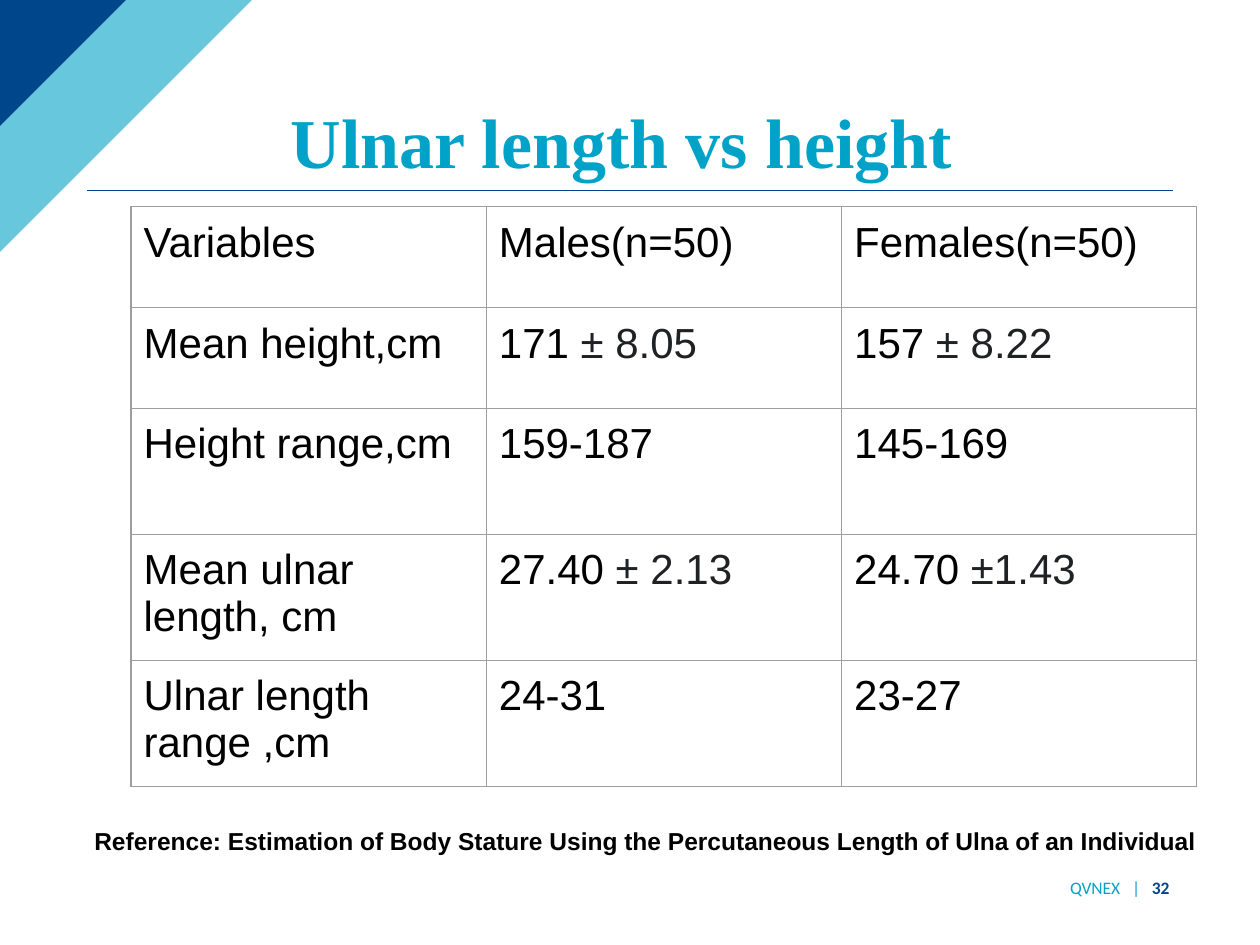
from dataclasses import dataclass

from lxml import etree
from pptx import Presentation
from pptx import util as u
from pptx.dml.color import RGBColor
from pptx.enum import shapes, text
from pptx.oxml import ns

COLORS = {
    "navy": "00468B",
    "teal": "00A2C7",
    "black": "000000",
    "charcoal": "202124",
    "grid": "9E9E9E",
}
WIDTH, HEIGHT = 10, 7.5
MARGIN = 0.069 * WIDTH
TITLE_BASE = 1.51


@dataclass
class Span:
    words: str
    color: str
    bold: bool = False
    tracking: float = 0  # extra points after each character


@dataclass
class Corner:
    width: float
    height: float
    color: str
    opacity: int = 100


CORNERS = [Corner(1.63, 1.64, "teal", 60), Corner(1.38, 1.39, "navy")]

# Each cell holds its value and, where there is one, the deviation
ROWS = [
    [("Variables",), ("Males(n=50)",), ("Females(n=50)",)],
    [("Mean height,cm",), ("171", " ± 8.05"), ("157", " ± 8.22")],
    [("Height range,cm",), ("159-187",), ("145-169",)],
    [("Mean ulnar length, cm",), ("27.40", " ± 2.13"), ("24.70", " ±1.43")],
    [("Ulnar length range ,cm",), ("24-31",), ("23-27",)],
]
ROW_HEIGHTS = [0.8, 0.8, 1, 1, 1]
COLUMN_WIDTH = 2.82

FOOTER = [
    Span("QVNEX", "teal"),
    Span(" ", "teal", tracking=4.5),
    Span("|", "teal"),
    Span(" ", "teal", tracking=4.5),
    Span("32", "navy", bold=True),
]


def rgb(name: str) -> RGBColor:
    return RGBColor.from_string(COLORS[name])


def write(para, spans: list[Span], font: str, size: float) -> None:
    para.font.name, para.font.size = font, u.Pt(size)
    for item in spans:
        span = para.add_run()
        span.text = item.words
        span.font.color.rgb = rgb(item.color)
        span.font.bold = item.bold
        if item.tracking:
            span.font._element.set("spc", str(round(item.tracking * 100)))


def draw_corner(page, corner: Corner) -> None:
    outline = page.shapes.build_freeform(0, 0, scale=u.Inches(1))
    outline.add_line_segments([(corner.width, 0), (0, corner.height)], close=True)
    triangle = outline.convert_to_shape()
    triangle.shadow.inherit = False
    triangle.line.fill.background()
    triangle.fill.solid()
    triangle.fill.fore_color.rgb = rgb(corner.color)
    if corner.opacity < 100:
        color = triangle._element.spPr.find(".//" + ns.qn("a:srgbClr"))
        etree.SubElement(color, ns.qn("a:alpha"), val=str(corner.opacity * 1000))


def draw_rule(page) -> None:
    y = u.Inches(TITLE_BASE)
    rule = page.shapes.add_connector(
        shapes.MSO_CONNECTOR.STRAIGHT,
        u.Inches(MARGIN), y, u.Inches(WIDTH - MARGIN), y)
    rule.line.color.rgb = rgb("navy")
    rule.line.width = u.Pt(0.75)
    etree.SubElement(rule._element.spPr, ns.qn("a:effectLst"))


def format_title(page) -> None:
    title = page.shapes.title
    title.left, title.top = u.Inches(MARGIN), u.Inches(0.4)
    title.width = u.Inches(WIDTH - 2 * MARGIN)
    title.height = u.Inches(TITLE_BASE - 0.4)
    frame = title.text_frame
    frame.auto_size = text.MSO_AUTO_SIZE.NONE
    frame.vertical_anchor = text.MSO_ANCHOR.BOTTOM
    para = frame.paragraphs[0]
    para.alignment = text.PP_ALIGN.CENTER
    para.line_spacing = 0.9
    write(para, [Span("Ulnar length vs height ", "teal", True)],
          "Times New Roman", 40)


def draw_borders(cell) -> None:
    properties = cell._tc.get_or_add_tcPr()
    for place, side in enumerate(("lnL", "lnR", "lnT", "lnB")):
        line = etree.Element(ns.qn("a:" + side), w=str(u.Pt(0.75)))
        fill = etree.SubElement(line, ns.qn("a:solidFill"))
        etree.SubElement(fill, ns.qn("a:srgbClr"), val=COLORS["grid"])
        properties.insert(place, line)


def draw_table(page) -> None:
    columns = len(ROWS[0])
    table = page.shapes.add_table(
        len(ROWS), columns, u.Inches(1.04), u.Inches(1.64),
        u.Inches(columns * COLUMN_WIDTH), u.Inches(sum(ROW_HEIGHTS))).table
    table.first_row = table.horz_banding = False
    for row, height in zip(table.rows, ROW_HEIGHTS):
        row.height = u.Inches(height)
    for r, row in enumerate(ROWS):
        for c, parts in enumerate(row):
            cell = table.cell(r, c)
            cell.fill.background()
            cell.margin_left = cell.margin_right = u.Inches(0.1)
            cell.margin_top = cell.margin_bottom = u.Inches(0.1)
            spans = [Span(*pair) for pair in zip(parts, ("black", "charcoal"))]
            write(cell.text_frame.paragraphs[0], spans, "Arial", 24)
            draw_borders(cell)


def draw_text(page, area: tuple, spans: list[Span], font: str, size: float,
              align=text.PP_ALIGN.LEFT) -> None:
    box = page.shapes.add_textbox(*(u.Inches(length) for length in area))
    frame = box.text_frame
    frame.word_wrap = True
    frame.vertical_anchor = text.MSO_ANCHOR.MIDDLE
    frame.paragraphs[0].alignment = align
    write(frame.paragraphs[0], spans, font, size)


def main() -> None:
    deck = Presentation()
    deck.slide_width, deck.slide_height = u.Inches(WIDTH), u.Inches(HEIGHT)
    page = deck.slides.add_slide(deck.slide_layouts[5])

    # Corner decoration and heading
    for corner in CORNERS:
        draw_corner(page, corner)
    draw_rule(page)
    format_title(page)

    # Measurements, source and page number
    draw_table(page)
    reference = ("Reference: Estimation of Body Stature Using the "
                 "Percutaneous Length of Ulna of an Individual")
    draw_text(page, (0.65, 6.47, 9.15, 0.41),
              [Span(reference, "black", True)], "Arial", 14)
    draw_text(page, (7.73, 6.94, 1.65, 0.21), FOOTER, "Calibri", 10,
              text.PP_ALIGN.RIGHT)
    deck.save("out.pptx")


if __name__ == "__main__":
    main()
